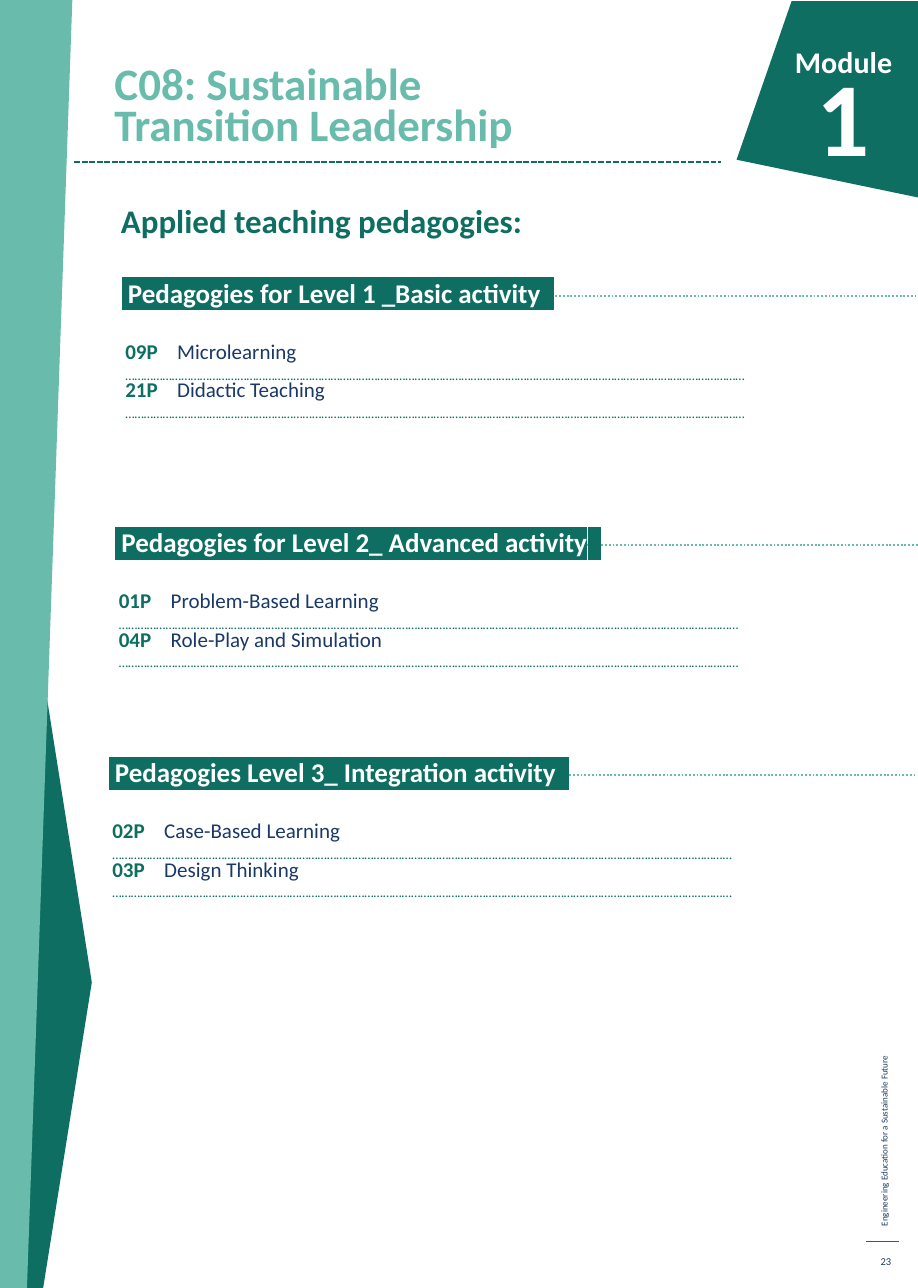
"""Build the pedagogy page of the Sustainable Transition Leadership module."""
from dataclasses import dataclass

from lxml.etree import SubElement
from pptx import Presentation
from pptx.dml.color import RGBColor
from pptx.enum.dml import MSO_LINE
from pptx.enum.shapes import MSO_CONNECTOR
from pptx.enum.text import MSO_ANCHOR, MSO_AUTO_SIZE, PP_ALIGN
from pptx.oxml.ns import qn
from pptx.util import Pt

PX = 9144
DOTS = "……………………………………………………………………………………………………………………….………………………………………………………"


@dataclass(frozen=True)
class Theme:
    font: str = "Calibri"
    dark: str = "0E6E61"
    light: str = "69BCAC"
    navy: str = "1A3966"
    white: str = "FFFFFF"
    title: int = 30
    heading: int = 22
    level: int = 18
    entry: int = 14
    dots: int = 9
    module: int = 20
    numeral: int = 70
    footer: int = 6
    page: int = 7


THEME = Theme()
LEVELS = (
    ((102, 263, 670, 33), 251, 93, " Pedagogies for Level 1 _Basic activity",
     (("09P", "Microlearning"), ("21P", "Didactic Teaching"))),
    ((96, 494, 670, 33), 252, 112, " Pedagogies for Level 2_ Advanced activity",
     (("01P", "Problem-Based Learning"), ("04P", "Role-Play and Simulation"))),
    ((90, 707, 670, 33), 250, 195, " Pedagogies Level 3_ Integration activity",
     (("02P", "Case-Based Learning"), ("03P", "Design Thinking"))),
)


def set_attributes(target, values):
    """Set each named attribute on the target."""
    for name, value in values.items():
        setattr(target, name, value)


def place(shape, box):
    """Move a shape to a box given in px."""
    names = ("left", "top", "width", "height")
    set_attributes(shape, {name: length * PX for name, length in zip(names, box)})


def prepare_frame(shape, anchor=MSO_ANCHOR.TOP):
    """Give a text frame wrapping, a fixed size and an anchor."""
    frame = shape.text_frame
    set_attributes(frame, {"word_wrap": True, "auto_size": MSO_AUTO_SIZE.NONE,
                           "vertical_anchor": anchor})
    return frame


def add_run(paragraph, text, size, color, bold=False, highlight=None):
    """Append a formatted run, with a highlight if one is named."""
    run = paragraph.add_run()
    run.text = text
    set_attributes(run.font, {"name": THEME.font, "size": Pt(size), "bold": bold})
    run.font.color.rgb = RGBColor.from_string(color)
    if highlight:
        properties = run.font._element
        marker = SubElement(properties, qn("a:highlight"))
        SubElement(marker, qn("a:srgbClr"), val=highlight)
        properties.find(qn("a:solidFill")).addnext(marker)


def format_paragraph(paragraph, margin=0, indent=0, **values):
    """Set alignment, spacing and indents, without a bullet."""
    defaults = {"alignment": PP_ALIGN.LEFT, "line_spacing": 1.0,
                "space_before": Pt(0), "space_after": Pt(0)}
    set_attributes(paragraph, {**defaults, **values})
    properties = paragraph._p.get_or_add_pPr()
    properties.set("marL", str(margin * PX))
    properties.set("indent", str(indent * PX))
    SubElement(properties, qn("a:buNone"))


def add_label(slide, box, text, size, color, bold=False,
              anchor=MSO_ANCHOR.TOP, **values):
    """Add a text box that holds one line of text."""
    shape = slide.shapes.add_textbox(*(length * PX for length in box))
    paragraph = prepare_frame(shape, anchor).paragraphs[0]
    format_paragraph(paragraph, **values)
    add_run(paragraph, text, size, color, bold)
    return shape


def add_rule(slide, left, top, width, color, weight, dash=None):
    """Draw a horizontal line."""
    line = slide.shapes.add_connector(MSO_CONNECTOR.STRAIGHT, left * PX, top * PX,
                                      (left + width) * PX, top * PX)
    line.line.color.rgb = RGBColor.from_string(color)
    set_attributes(line.line, {"width": Pt(weight), "dash_style": dash})
    SubElement(line._element.spPr, qn("a:effectLst"))


def add_outline(slide, left, top, points, color):
    """Draw a filled polygon from points relative to its corner."""
    builder = slide.shapes.build_freeform(*points[0], scale=PX)
    builder.add_line_segments(points[1:], close=True)
    shape = builder.convert_to_shape(left * PX, top * PX)
    shape.shadow.inherit = False
    shape.fill.solid()
    shape.fill.fore_color.rgb = RGBColor.from_string(color)
    shape.line.fill.background()


def add_side_band(slide, box):
    """Draw the two slanted shapes on the left edge."""
    left, top, width, height = box
    add_outline(slide, left + 23, top + 517,
                [(17, 676), (0, 676), (0, 0), (60, 380), (62, 393)], THEME.dark)
    add_outline(slide, left, top,
                [(0, 0), (width, 0), (25, height), (0, height)], THEME.light)


def add_header(slide, box):
    """Place the title and its dashed rule."""
    left, top, width, height = box
    place(slide.shapes.title, box)
    paragraph = prepare_frame(slide.shapes.title, MSO_ANCHOR.BOTTOM).paragraphs[0]
    format_paragraph(paragraph, line_spacing=Pt(26.8))
    add_run(paragraph, "C08: Sustainable", THEME.title, THEME.light, True)
    paragraph.add_line_break()
    add_run(paragraph, "Transition Leadership", THEME.title, THEME.light, True)
    add_rule(slide, left - 27, top + height + 6, 599, THEME.dark, 1.25, MSO_LINE.SQUARE_DOT)


def add_module_badge(slide, box):
    """Draw the corner badge with the module number."""
    left, top, width, height = box
    add_outline(slide, left, top,
                [(width, 0), (51, 0), (0, 147), (173, height)], THEME.dark)
    for x, y, text, size in ((-26, 34, "Module", THEME.module),
                             (-47, 42, "1", THEME.numeral)):
        add_label(slide, (left + x, top + y, 180, 142), text, size, THEME.white, True,
                  alignment=PP_ALIGN.RIGHT, space_before=Pt(22.7))


def add_heading(placeholder, box):
    """Place the heading above the levels."""
    place(placeholder, box)
    paragraph = prepare_frame(placeholder).paragraphs[0]
    format_paragraph(paragraph, line_spacing=0.9, space_before=Pt(8.5))
    add_run(paragraph, "Applied teaching pedagogies:", THEME.heading, THEME.dark, True)


def add_level(slide, placeholder, box, rule_left, list_height, name, entries):
    """Place a highlighted level name with its rule and list."""
    left, top, width, height = box
    add_rule(slide, rule_left, top + 11, 598, THEME.light, 1.25, MSO_LINE.ROUND_DOT)
    shape = slide.shapes.add_textbox(*(length * PX for length in box))
    paragraph = prepare_frame(shape).paragraphs[0]
    format_paragraph(paragraph, margin=1, alignment=PP_ALIGN.JUSTIFY,
                     line_spacing=Pt(12.8))
    for text, color in ((name, THEME.white), (". ", THEME.dark)):
        add_run(paragraph, text, THEME.level, color, True, THEME.dark)

    place(placeholder, (left + 3, top + 51, width - 6, list_height))
    frame = prepare_frame(placeholder)
    for index, (code, entry) in enumerate(entries):
        row = frame.add_paragraph() if index else frame.paragraphs[0]
        divider = frame.add_paragraph()
        for paragraph in (row, divider):
            format_paragraph(paragraph, margin=49, indent=-48, line_spacing=Pt(12.8))
        add_run(row, f"{code}\t", THEME.entry, THEME.dark, True)
        add_run(row, entry, THEME.entry, THEME.navy)
        add_run(divider, DOTS, THEME.dots, THEME.dark)


def add_footer(slide, box):
    """Place the vertical running title, its rule and the page number."""
    left, top, width, height = box
    running_title = add_label(slide, (left - 208, top, 449, 20),
                              "Engineering Education for a Sustainable Future",
                              THEME.footer, THEME.navy)
    running_title.rotation = 270
    add_rule(slide, left, top + 239, 30, THEME.dark, 0.75)
    add_label(slide, (left, top + height - 29, width, 29), "23", THEME.page, THEME.navy,
              anchor=MSO_ANCHOR.MIDDLE, alignment=PP_ALIGN.RIGHT)


def main():
    """Assemble and save the page."""
    presentation = Presentation()
    set_attributes(presentation, {"slide_width": 850 * PX, "slide_height": 1193 * PX})
    slide = presentation.slides.add_slide(presentation.slide_layouts.get_by_name("Comparison"))
    heading, *lists = [slide.placeholders[index] for index in (1, 2, 3, 4)]
    for placeholder in list(slide.placeholders):
        if placeholder.placeholder_format.idx > 4:
            placeholder._element.getparent().remove(placeholder._element)
    add_footer(slide, (802, 911, 33, 272))
    add_side_band(slide, (0, 0, 67, 1193))
    add_heading(heading, (102, 185, 554, 105))
    for placeholder, level in zip(lists, LEVELS):
        add_level(slide, placeholder, *level)
    add_header(slide, (96, 39, 536, 105))
    add_module_badge(slide, (682, 1, 175, 183))
    presentation.save("out.pptx")


if __name__ == "__main__":
    main()
